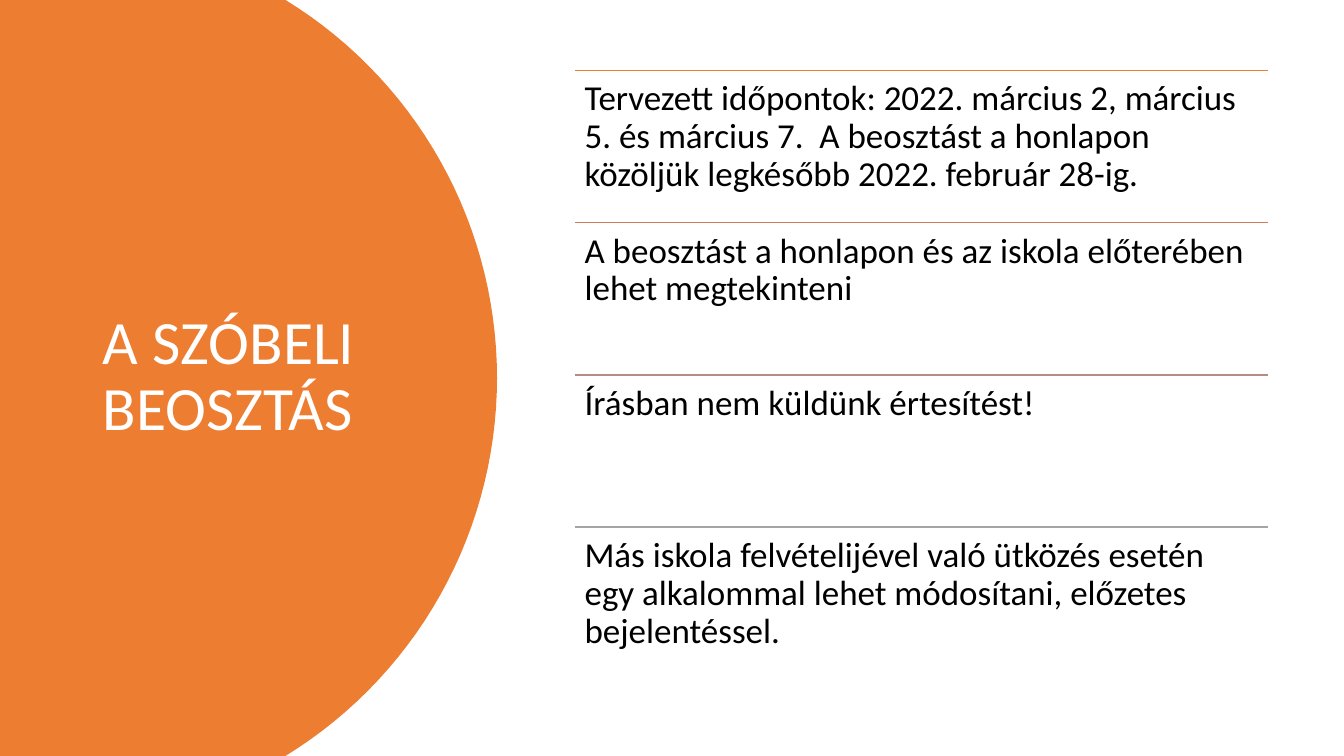
from math import asin, cos, sin

from lxml import etree
from pptx import Presentation
from pptx.dml.color import RGBColor
from pptx.enum.shapes import MSO_CONNECTOR
from pptx.enum.text import MSO_ANCHOR, MSO_AUTO_SIZE, PP_ALIGN
from pptx.oxml.ns import qn
from pptx.util import Inches, Pt

STRAIGHT = MSO_CONNECTOR.STRAIGHT
MIDDLE, TOP = MSO_ANCHOR.MIDDLE, MSO_ANCHOR.TOP
NO_FIT = MSO_AUTO_SIZE.NONE
LEFT = PP_ALIGN.LEFT

ORANGE = RGBColor(0xED, 0x7D, 0x31)
TERRACOTTA = RGBColor(0xD1, 0x7B, 0x5C)
ROSE = RGBColor(0xB9, 0x8A, 0x82)
GRAY = RGBColor(0xA5, 0xA5, 0xA5)
WHITE = RGBColor(0xFF, 0xFF, 0xFF)
BLACK = RGBColor(0, 0, 0)

SLIDE_W, SLIDE_H = 13.33, 7.5
PANEL_W, RADIUS, ARC_STEPS = 4.93, 4.4, 60
LIST_X, LIST_Y, LIST_W, ROW_H = 5.7, 0.7, 6.88, 1.51

ROWS = [
    (ORANGE, "Tervezett időpontok: 2022. március 2, március 5. és március 7.  "
             "A beosztást a honlapon közöljük legkésőbb 2022. február 28-ig."),
    (TERRACOTTA, "A beosztást a honlapon és az iskola előterében lehet megtekinteni"),
    (ROSE, "Írásban nem küldünk értesítést!"),
    (GRAY, "Más iskola felvételijével való ütközés esetén egy alkalommal "
           "lehet módosítani, előzetes bejelentéssel."),
]


class SlideBuilder:
    font = "Calibri"

    def __init__(self, prs):
        self.s = prs.slides.add_slide(prs.slide_layouts[5])

    def fill_text(self, sp, text, size, color, frame):
        tf = sp.text_frame
        for name, value in frame.items():
            setattr(tf, name, value)
        p = tf.paragraphs[0]
        p.alignment = LEFT
        p.line_spacing = 0.9
        r = p.add_run()
        r.text = text
        for name, value in {"name": self.font, "size": Pt(size)}.items():
            setattr(r.font, name, value)
        r.font.color.rgb = color

    def title(self, text, box):
        sp = self.s.shapes.title
        for name, value in zip(("left", "top", "width", "height"), box):
            setattr(sp, name, Inches(value))
        frame = {"word_wrap": True, "auto_size": NO_FIT, "vertical_anchor": MIDDLE}
        self.fill_text(sp, text, 44, WHITE, frame)

    def text(self, text, box):
        sp = self.s.shapes.add_textbox(*map(Inches, box))
        frame = {"word_wrap": True, "auto_size": NO_FIT, "vertical_anchor": TOP}
        for side in ("left", "top", "right", "bottom"):
            frame[f"margin_{side}"] = Inches(0.1)
        self.fill_text(sp, text, 25, BLACK, frame)

    def rule(self, x, y, width, color):
        line = self.s.shapes.add_connector(
            STRAIGHT, Inches(x), Inches(y), Inches(x + width), Inches(y))
        line.line.color.rgb = color
        line.line.width = Pt(1)
        etree.SubElement(line._element.spPr, qn("a:effectLst"))

    def round_panel(self, width, height, radius, color):
        half = asin(height / 2 / radius)
        angles = [half * (2 * i / ARC_STEPS - 1) for i in range(ARC_STEPS + 1)]
        points = [(width - radius + radius * cos(a), height / 2 + radius * sin(a))
                  for a in angles]
        points.append((0, height))
        builder = self.s.shapes.build_freeform(0, 0)
        builder.add_line_segments([(Inches(x), Inches(y)) for x, y in points])
        sp = builder.convert_to_shape()
        sp.fill.solid()
        sp.fill.fore_color.rgb = color
        sp.line.fill.background()
        sp.shadow.inherit = False
        self.s.shapes.title._element.addprevious(sp._element)


def main():
    prs = Presentation()
    prs.slide_width, prs.slide_height = Inches(SLIDE_W), Inches(SLIDE_H)
    slide = SlideBuilder(prs)
    slide.round_panel(PANEL_W, SLIDE_H, RADIUS, ORANGE)
    slide.title("A SZÓBELI BEOSZTÁS", (0.92, 0.7, 3.23, 6.09))
    for i, (color, text) in enumerate(ROWS):
        y = LIST_Y + i * ROW_H
        slide.rule(LIST_X, y, LIST_W, color)
        slide.text(text, (LIST_X, y, LIST_W, ROW_H))
    prs.save("out.pptx")


if __name__ == "__main__":
    main()
